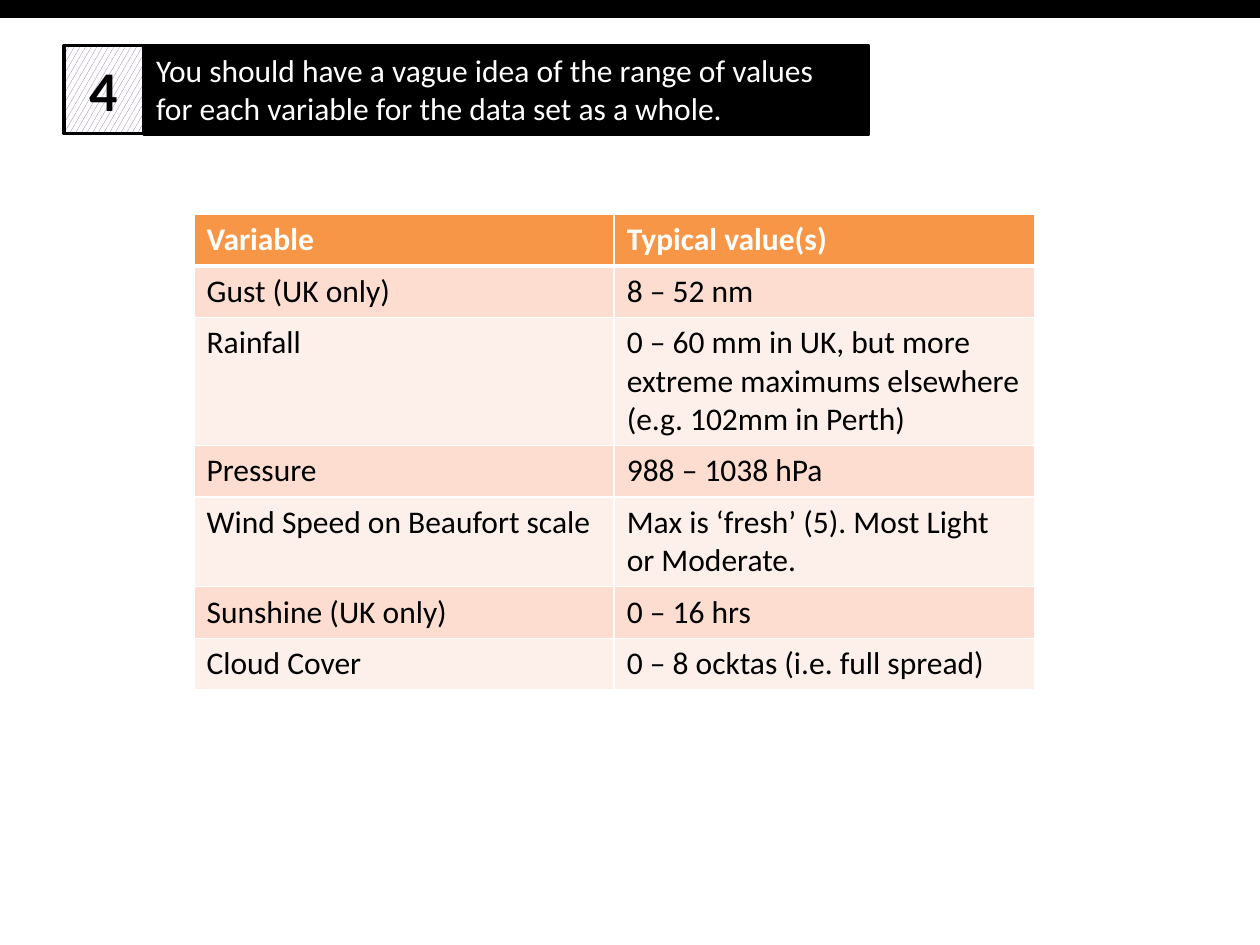
"""Build a slide listing typical values for each weather variable."""
from typing import NamedTuple

from lxml import etree
from pptx import Presentation
from pptx import util as u
from pptx.dml.color import RGBColor
from pptx.enum import dml, shapes, text
from pptx.oxml.ns import qn

BLACK = RGBColor(0x00, 0x00, 0x00)
WHITE = RGBColor(0xFF, 0xFF, 0xFF)
PURPLE = RGBColor(0x80, 0x64, 0xA2)
ORANGE = RGBColor(0xF7, 0x96, 0x46)
BANDS = (RGBColor(0xFC, 0xDD, 0xCF), RGBColor(0xFD, 0xEF, 0xE9))

FONT = "Calibri"
WIDTH, HEIGHT = u.Inches(10), u.Inches(7.5)
ROW_HEIGHT = u.Inches(0.41)


class Area(NamedTuple):
    """A rectangle in percent of the slide's width and height."""
    left: float
    top: float
    width: float
    height: float

    def emu(self) -> tuple[int, ...]:
        """Return the rectangle in slide units."""
        sides = (WIDTH, HEIGHT, WIDTH, HEIGHT)
        return tuple(round(share * side / 100) for share, side in zip(self, sides))


class Panel(NamedTuple):
    """An outlined rectangle with optional wording."""
    area: Area
    wording: str = ""
    size: int = 18
    color: RGBColor = WHITE
    bold: bool = False
    align: text.PP_ALIGN = text.PP_ALIGN.LEFT
    anchor: text.MSO_ANCHOR = text.MSO_ANCHOR.TOP
    patterned: bool = False


class Reading(NamedTuple):
    """A table row: a variable and its typical values."""
    variable: str
    typical: str


PANELS = (
    Panel(Area(11.4, 4.8, 57.5, 9.47),
          "You should have a vague idea of the range of values "
          "for each variable for the data set as a whole."),
    Panel(Area(5.1, 4.8, 6.3, 9.33), "4", 32, BLACK, True,
          text.PP_ALIGN.CENTER, text.MSO_ANCHOR.MIDDLE, True),
    Panel(Area(0, 0, 100, 1.73)),
)

READINGS = (
    Reading("Variable", "Typical value(s)"),
    Reading("Gust (UK only)", "8 – 52 nm"),
    Reading("Rainfall", "0 – 60 mm in UK, but more extreme maximums elsewhere "
                        "(e.g. 102mm in Perth)"),
    Reading("Pressure", "988 – 1038 hPa"),
    Reading("Wind Speed on Beaufort scale",
            "Max is ‘fresh’ (5). Most Light or Moderate."),
    Reading("Sunshine (UK only)", "0 – 16 hrs"),
    Reading("Cloud Cover", "0 – 8 ocktas (i.e. full spread)"),
)
READINGS_AREA = Area(15.4, 22.67, 66.7, 38.27)


def style(paragraph, size: int, color: RGBColor, bold: bool) -> None:
    """Set the font of a paragraph."""
    font = paragraph.font
    font.name, font.size, font.bold = FONT, u.Pt(size), bold
    font.color.rgb = color


def draw_panel(slide, panel: Panel) -> None:
    """Draw one panel with its fill, outline and wording."""
    box = slide.shapes.add_shape(shapes.MSO_SHAPE.RECTANGLE, *panel.area.emu())
    box.shadow.inherit = False
    box.line.color.rgb = BLACK
    box.line.width = u.Pt(2)
    if panel.patterned:
        box.fill.patterned()
        box.fill.pattern = dml.MSO_PATTERN.LARGE_CONFETTI
        box.fill.fore_color.rgb = PURPLE
        box.fill.back_color.rgb = WHITE
    else:
        box.fill.solid()
        box.fill.fore_color.rgb = BLACK
    if panel.wording:
        frame = box.text_frame
        frame.word_wrap = True
        frame.vertical_anchor = panel.anchor
        frame.text = panel.wording
        paragraph = frame.paragraphs[0]
        paragraph.alignment = panel.align
        style(paragraph, panel.size, panel.color, panel.bold)


def add_borders(cell, top: int, bottom: int) -> None:
    """Give a cell white borders, with top and bottom widths in points."""
    properties = cell._tc.get_or_add_tcPr()
    widths = {"a:lnL": 1, "a:lnR": 1, "a:lnT": top, "a:lnB": bottom}
    for place, (tag, points) in enumerate(widths.items()):
        line = etree.Element(qn(tag), w=str(u.Pt(points)))
        fill = etree.SubElement(line, qn("a:solidFill"))
        etree.SubElement(fill, qn("a:srgbClr"), val=str(WHITE))
        properties.insert(place, line)


def draw_readings(slide, area: Area, readings: tuple[Reading, ...]) -> None:
    """Draw the table with a header row and banded body rows."""
    columns = len(Reading._fields)
    table = slide.shapes.add_table(len(readings), columns, *area.emu()).table
    for number, reading in enumerate(readings):
        header = number == 0
        table.rows[number].height = ROW_HEIGHT
        for cell, wording in zip(table.rows[number].cells, reading):
            cell.text = wording
            style(cell.text_frame.paragraphs[0], 18, WHITE if header else BLACK, header)
            cell.fill.solid()
            cell.fill.fore_color.rgb = ORANGE if header else BANDS[(number - 1) % 2]
            add_borders(cell, 3 if number == 1 else 1, 3 if header else 1)


def main() -> None:
    """Build and save the presentation."""
    deck = Presentation()
    deck.slide_width, deck.slide_height = WIDTH, HEIGHT
    slide = deck.slides.add_slide(deck.slide_layouts[6])
    for panel in PANELS:
        draw_panel(slide, panel)
    draw_readings(slide, READINGS_AREA, READINGS)
    deck.save("out.pptx")


if __name__ == "__main__":
    main()
